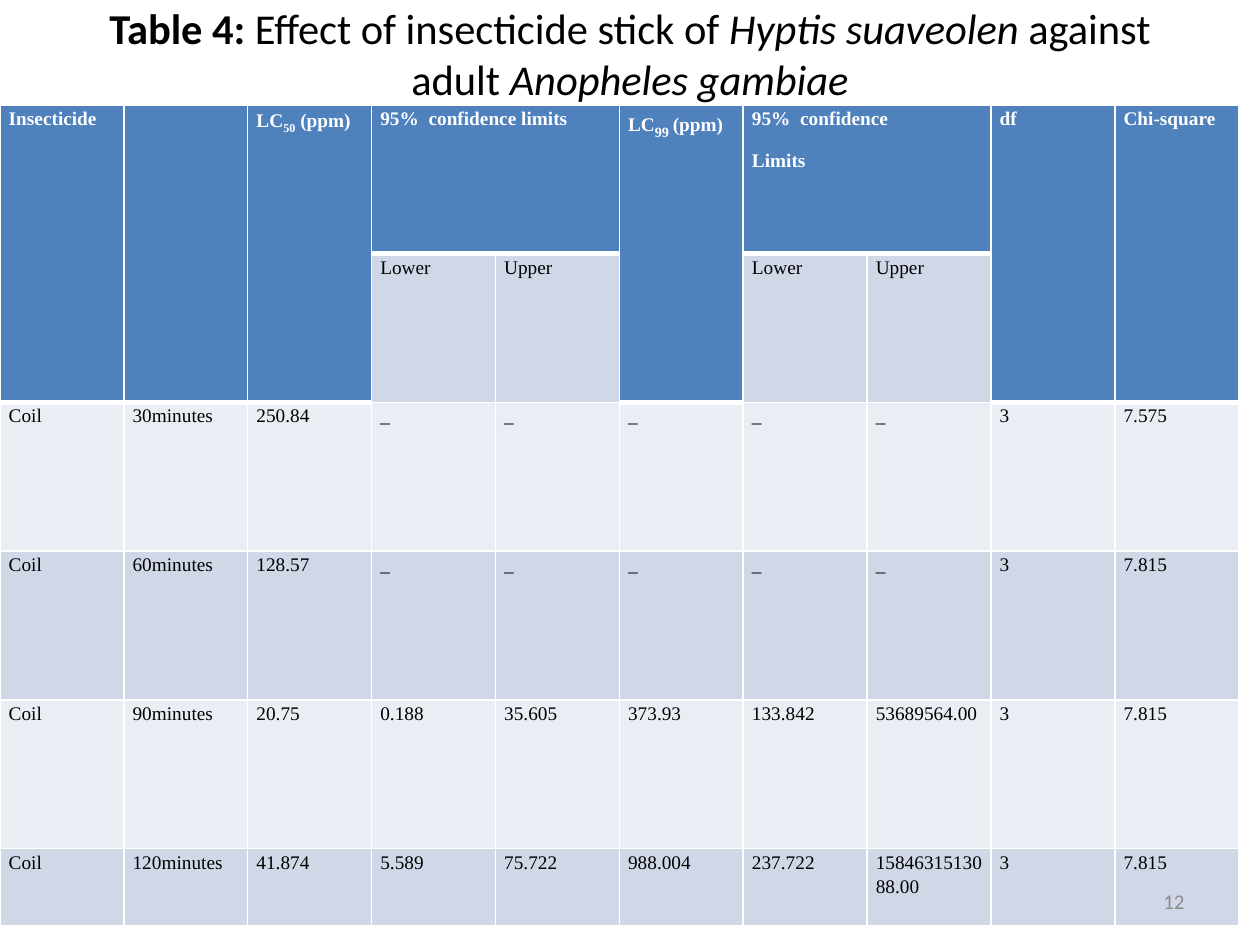
from dataclasses import dataclass

from lxml import etree
from pptx import Presentation
from pptx.dml.color import RGBColor
from pptx.enum.text import MSO_ANCHOR, PP_ALIGN
from pptx.oxml.ns import qn
from pptx.util import Pt

CENTER, RIGHT, JUSTIFY = PP_ALIGN.CENTER, PP_ALIGN.RIGHT, PP_ALIGN.JUSTIFY
TOP, MIDDLE = MSO_ANCHOR.TOP, MSO_ANCHOR.MIDDLE
BLANK_LAYOUT = 6


@dataclass(frozen=True)
class Theme:
    heading_font: str = "Calibri"
    table_font: str = "Times New Roman"
    title_size: float = 24.3
    number_size: float = 12
    cell_size: float = 11
    text: str = "000000"
    muted: str = "8C8C8C"
    white: str = "FFFFFF"
    header: str = "4F81BD"
    bands: tuple = ("E9EDF4", "D0D8E8")
    thin: float = 1
    thick: float = 3


HEADER_ROWS = 2
COLUMN_WIDTH = 70.8
ROW_HEIGHTS = [85] * 5 + [44]
LIMIT_COLUMNS = (3, 6)  # first column of each Lower/Upper pair

# Each heading is a list of paragraphs, each paragraph a list of (text, format) runs.
HEADINGS = {
    0: [[("Insecticide", {})]],
    2: [[("LC", {}), ("50", {"size": 12, "baseline": -25}), (" (ppm)", {})]],
    3: [[("95%  confidence limits", {})]],
    5: [[("LC", {}), ("99 ", {"size": 14, "baseline": -25}), ("(ppm)", {})]],
    6: [[("95%  confidence", {})], [("Limits", {})]],
    8: [[("df", {})]],
    9: [[("Chi-square", {})]],
}
DASHES = ["_"] * 5
RESULTS = [
    ["Coil", "30minutes", "250.84", *DASHES, "3", "7.575"],
    ["Coil", "60minutes", "128.57", *DASHES, "3", "7.815"],
    ["Coil", "90minutes", "20.75", "0.188", "35.605", "373.93",
     "133.842", "53689564.00", "3", "7.815"],
    ["Coil", "120minutes", "41.874", "5.589", "75.722", "988.004",
     "237.722", "1584631513088.00", "3", "7.815"],
]


class SlideBuilder:
    def __init__(self, slide, theme):
        self.s = slide
        self.theme = theme

    def add_run(self, p, text, font, size, color, bold=False, italic=False, baseline=0):
        """Add one run; baseline is a percentage, negative for subscript."""
        r = p.add_run()
        r.text = text
        r.font.name = font
        r.font.size = Pt(size)
        r.font.bold = bold
        r.font.italic = italic
        r.font.color.rgb = RGBColor.from_string(color)
        if baseline:
            r._r.get_or_add_rPr().set("baseline", str(baseline * 1000))

    def text_box(self, box, runs, size, color, align, anchor, top_inset=3.6):
        sp = self.s.shapes.add_textbox(*map(Pt, box))
        tf = sp.text_frame
        tf.word_wrap = True
        tf.vertical_anchor = anchor
        tf.margin_top = Pt(top_inset)
        p = tf.paragraphs[0]
        p.alignment = align
        for text, fmt in runs:
            self.add_run(p, text, self.theme.heading_font, size, color, **fmt)

    def table(self, left, top, col_width, row_heights, columns):
        frame = self.s.shapes.add_table(
            len(row_heights), columns, Pt(left), Pt(top),
            Pt(col_width * columns), Pt(sum(row_heights)))
        table = frame.table
        table.first_row = table.horz_banding = False
        for column in table.columns:
            column.width = Pt(col_width)
        for row, height in zip(table.rows, row_heights):
            row.height = Pt(height)
        return table

    def cell_style(self, cell, fill, top, bottom):
        """Set fill, margins and white borders; top and bottom are line widths."""
        cell.margin_left = cell.margin_right = Pt(5)
        cell.margin_top = cell.margin_bottom = 0
        tcPr = cell._tc.get_or_add_tcPr()
        thin = self.theme.thin
        for side, width in (("L", thin), ("R", thin), ("T", top), ("B", bottom)):
            line = etree.SubElement(tcPr, qn(f"a:ln{side}"), w=str(Pt(width)))
            solid = etree.SubElement(line, qn("a:solidFill"))
            etree.SubElement(solid, qn("a:srgbClr"), val=self.theme.white)
        cell.fill.solid()
        cell.fill.fore_color.rgb = RGBColor.from_string(fill)

    def cell_text(self, cell, paragraphs, color, bold=False):
        tf = cell.text_frame
        for i, runs in enumerate(paragraphs):
            p = tf.paragraphs[0] if i == 0 else tf.add_paragraph()
            p.alignment = JUSTIFY
            p.line_spacing = 1.15
            p.space_after = Pt(10)
            for text, fmt in runs:
                style = {"size": self.theme.cell_size, "bold": bold, **fmt}
                self.add_run(p, text, self.theme.table_font, color=color, **style)


def is_heading(row, col):
    """Headings fill the first row, and the second except under the limits."""
    under_limits = any(col in (c, c + 1) for c in LIMIT_COLUMNS)
    return row == 0 or (row == 1 and not under_limits)


def build_results_table(builder):
    theme = builder.theme
    columns = len(RESULTS[0])
    table = builder.table(0, 60, COLUMN_WIDTH, ROW_HEIGHTS, columns)

    for row in range(len(ROW_HEIGHTS)):
        for col in range(columns):
            heading = is_heading(row, col)
            below_heading = row > 0 and not heading and is_heading(row - 1, col)
            builder.cell_style(
                table.cell(row, col),
                theme.header if heading else theme.bands[row % 2],
                top=theme.thick if below_heading else theme.thin,
                bottom=theme.thick if heading else theme.thin)

    for col in range(columns):
        if not is_heading(1, col):
            continue
        table.cell(0, col).merge(table.cell(1, col))
    for col in LIMIT_COLUMNS:
        table.cell(0, col).merge(table.cell(0, col + 1))
        for offset, label in enumerate(("Lower", "Upper")):
            builder.cell_text(table.cell(1, col + offset), [[(label, {})]], theme.text)

    for col, paragraphs in HEADINGS.items():
        builder.cell_text(table.cell(0, col), paragraphs, theme.white, bold=True)
    for row, values in enumerate(RESULTS, HEADER_ROWS):
        for col, value in enumerate(values):
            builder.cell_text(table.cell(row, col), [[(value, {})]], theme.text)


def main():
    prs = Presentation()
    prs.slide_width, prs.slide_height = Pt(720), Pt(540)
    theme = Theme()
    slide = prs.slides.add_slide(prs.slide_layouts[BLANK_LAYOUT])
    builder = SlideBuilder(slide, theme)

    build_results_table(builder)
    title = [
        ("Table 4: ", {"bold": True}),
        ("Effect of insecticide stick of ", {}),
        ("Hyptis suaveolen", {"italic": True}),
        (" against adult ", {}),
        ("Anopheles gambiae", {"italic": True}),
    ]
    builder.text_box((36, 0, 648, 48), title, theme.title_size, theme.text,
                     CENTER, TOP, top_inset=1)
    builder.text_box((516, 500.5, 168, 28.75), [("12", {})], theme.number_size,
                     theme.muted, RIGHT, MIDDLE)
    prs.save("out.pptx")


if __name__ == "__main__":
    main()
